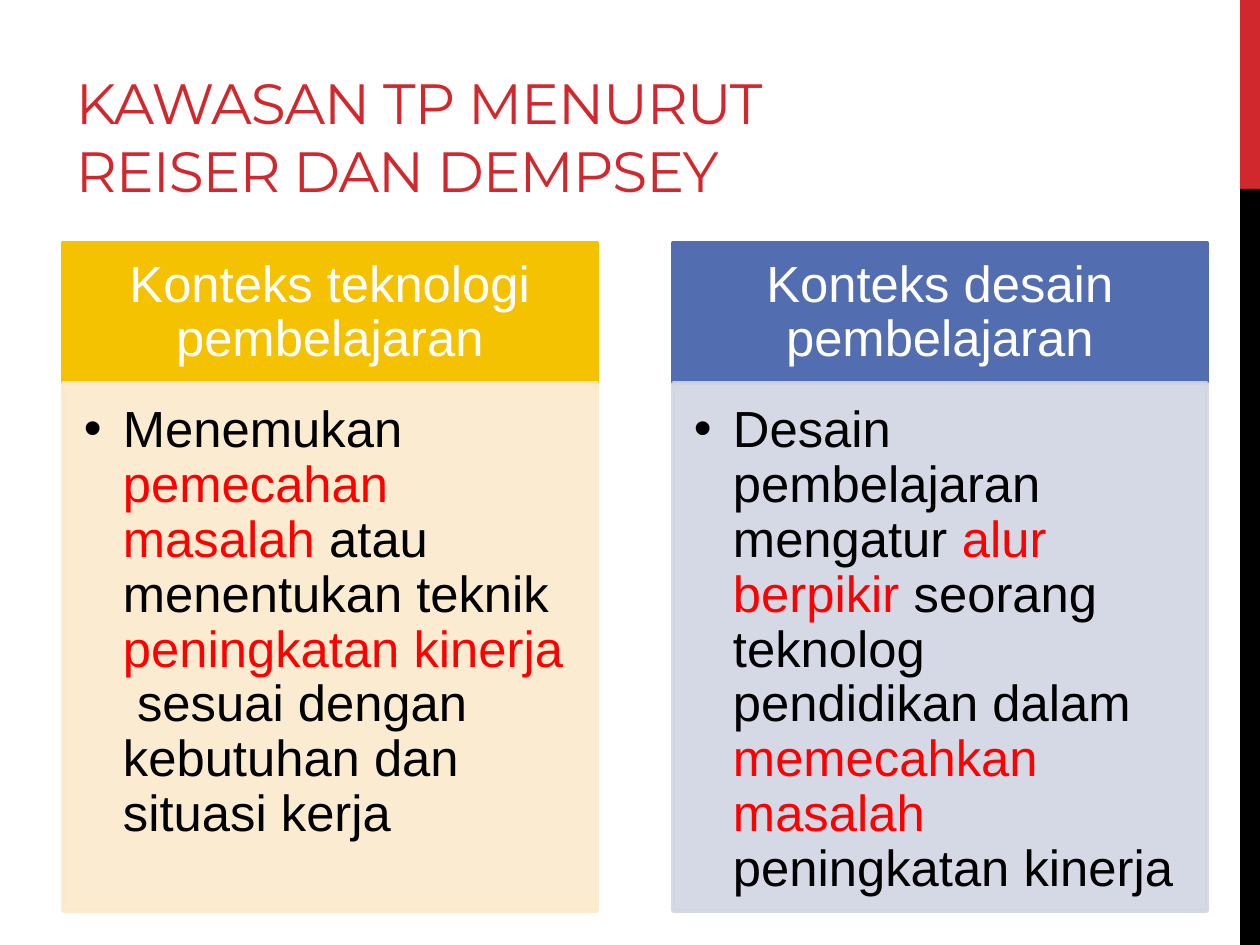
from lxml import etree
from pptx import Presentation
from pptx.dml.color import RGBColor
from pptx.enum.shapes import MSO_SHAPE
from pptx.enum.text import MSO_ANCHOR, PP_ALIGN
from pptx.oxml.ns import qn
from pptx.util import Emu, Pt

RECTANGLE = MSO_SHAPE.RECTANGLE
TOP, MIDDLE, BOTTOM = MSO_ANCHOR.TOP, MSO_ANCHOR.MIDDLE, MSO_ANCHOR.BOTTOM
LEFT, CENTER = PP_ALIGN.LEFT, PP_ALIGN.CENTER

EMU_PER_PX = 914400 / 126
PAGE_WIDTH, PAGE_HEIGHT = 1260, 945
HEADER_HEIGHT = 140
HEADER_INSETS = (29, 16, 29, 16)
BODY_INSETS = (21, 21, 29, 32)
BULLET_INDENT = 39
COLORS = {
    "red": "D1282E", "black": "000000", "white": "FFFFFF", "accent": "FF0000",
    "gold": "F5C201", "cream": "FBE9CC", "blue": "526DB0", "mist": "D1D5E4",
}

COLUMNS = [
    ("Konteks teknologi pembelajaran", "gold", "cream", [
        ("Menemukan ", "black"),
        ("pemecahan masalah ", "accent"),
        ("atau menentukan teknik ", "black"),
        ("peningkatan kinerja  ", "accent"),
        ("sesuai dengan kebutuhan dan situasi kerja", "black"),
    ]),
    ("Konteks desain pembelajaran", "blue", "mist", [
        ("Desain pembelajaran mengatur ", "black"),
        ("alur berpikir ", "accent"),
        ("seorang teknolog pendidikan dalam ", "black"),
        ("memecahkan masalah ", "accent"),
        ("peningkatan kinerja", "black"),
    ]),
]


def px(length):
    return Emu(round(length * EMU_PER_PX))


def rgb(name):
    return RGBColor.from_string(COLORS[name])


def set_opacity(fill_parent, percent):
    """Make the solid fill directly under an XML element see-through."""
    color = fill_parent.find(qn("a:solidFill"))[0]
    etree.SubElement(color, qn("a:alpha"), val=str(percent * 1000))


def add_block(page, box, color, outlined=False, opacity=100):
    block = page.shapes.add_shape(RECTANGLE, *map(px, box))
    block.shadow.inherit = False
    block.fill.solid()
    block.fill.fore_color.rgb = rgb(color)
    if outlined:
        block.line.color.rgb = rgb(color)
        block.line.width = Pt(2.25)
    else:
        block.line.fill.background()
    if opacity < 100:
        properties = block._element.spPr
        set_opacity(properties, opacity)
        set_opacity(properties.find(qn("a:ln")), opacity)
    return block


def prepare_frame(shape, anchor, insets):
    frame = shape.text_frame
    frame.word_wrap = True
    frame.vertical_anchor = anchor
    (frame.margin_left, frame.margin_top,
     frame.margin_right, frame.margin_bottom) = map(px, insets)
    return frame


def add_span(para, text, color, size=29, font="Arial"):
    span = para.add_run()
    span.text = text
    span.font.name = font
    span.font.size = Pt(size)
    span.font.color.rgb = rgb(color)
    return span


def add_bullet(para):
    properties = para._p.get_or_add_pPr()
    properties.set("marL", str(px(BULLET_INDENT)))
    properties.set("indent", str(-px(BULLET_INDENT)))
    etree.SubElement(properties, qn("a:buFont"), typeface="Arial")
    etree.SubElement(properties, qn("a:buChar"), char="•")


def add_side_bar(page, box):
    """Red fifth above a black remainder."""
    left, top, width, height = box
    split = height // 5
    add_block(page, (left, top, width, split), "red")
    add_block(page, (left, top + split, width, height - split), "black")


def add_title(page, box, text):
    title = page.shapes.add_textbox(*map(px, box))
    frame = prepare_frame(title, BOTTOM, (13, 6, 13, 6))
    span = add_span(frame.paragraphs[0], text, "red", 32.4, "Montserrat")
    span._r.get_or_add_rPr().set("spc", "-60")


def add_column(page, box, heading, header_color, body_color, spans):
    left, top, width, height = box
    header = add_block(page, (left, top, width, HEADER_HEIGHT), header_color, True)
    para = prepare_frame(header, MIDDLE, HEADER_INSETS).paragraphs[0]
    para.alignment = CENTER
    para.line_spacing = 0.9
    add_span(para, heading, "white")

    body_box = (left, top + HEADER_HEIGHT, width, height - HEADER_HEIGHT)
    body = add_block(page, body_box, body_color, True, 90)
    para = prepare_frame(body, TOP, BODY_INSETS).paragraphs[0]
    add_bullet(para)
    para.alignment = LEFT
    para.line_spacing = 0.9
    for text, color in spans:
        add_span(para, text, color)


def add_columns(page, box, gap):
    left, top, width, height = box
    column_width = (width - gap * (len(COLUMNS) - 1)) // len(COLUMNS)
    for index, column in enumerate(COLUMNS):
        column_left = left + index * (column_width + gap)
        add_column(page, (column_left, top, column_width, height), *column)


def main():
    deck = Presentation()
    deck.slide_width, deck.slide_height = px(PAGE_WIDTH), px(PAGE_HEIGHT)
    page = deck.slides.add_slide(deck.slide_layouts[6])
    add_side_bar(page, (1240, 0, 20, PAGE_HEIGHT))
    add_title(page, (63, 21, 798, 189), "KAWASAN TP MENURUT REISER DAN DEMPSEY")
    add_columns(page, (63, 243, 1144, 668), gap=76)
    deck.save("out.pptx")


if __name__ == "__main__":
    main()
